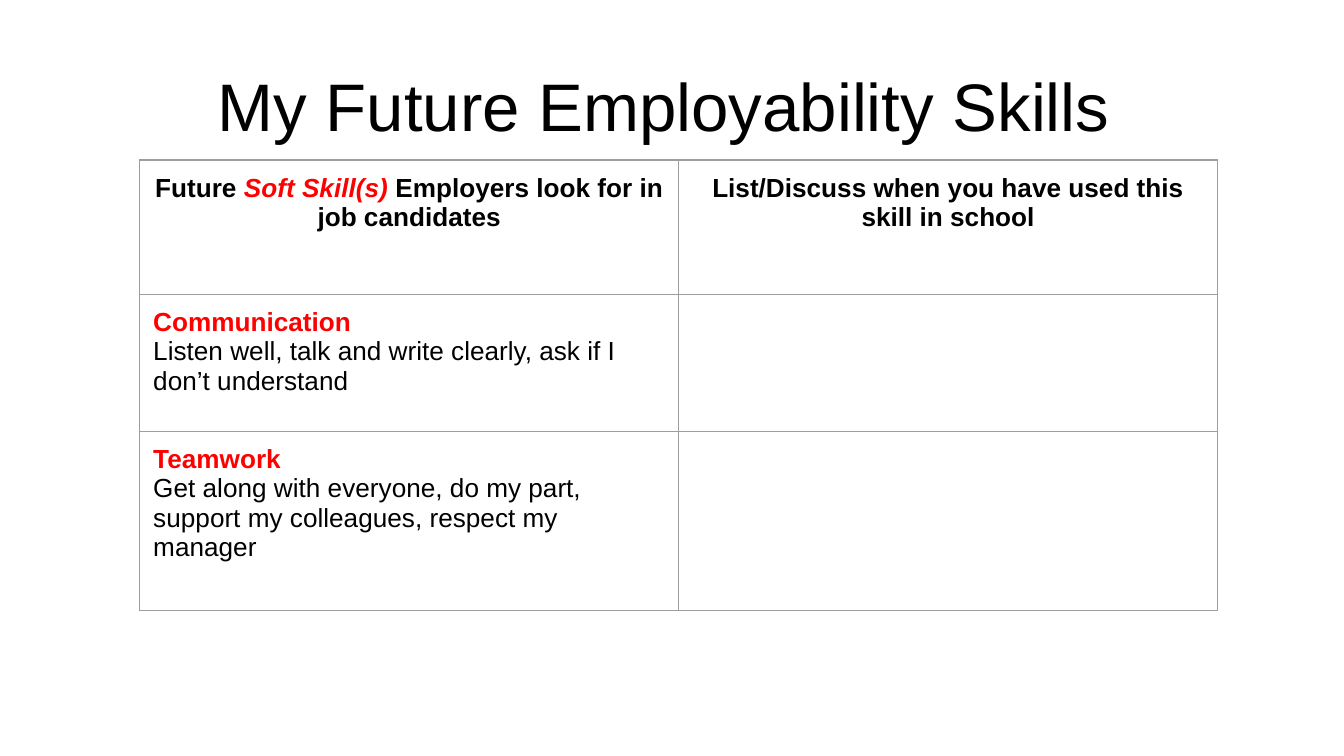
from pptx import Presentation
from pptx.dml.color import RGBColor as RGB
from pptx.enum.text import MSO_ANCHOR as Anchor, PP_ALIGN as Align
from pptx.oxml import parse_xml
from pptx.oxml.ns import nsdecls
from pptx.util import Inches, Pt

COLORS = {"text": "000000", "skill": "FF0000", "line": "9E9E9E", "page": "FFFFFF"}
STYLES = {
    "title": {"size": Pt(36), "bold": False, "italic": False},
    "head": {"size": Pt(14), "bold": True, "italic": False},
    "accent": {"size": Pt(14), "bold": True, "italic": True},
    "body": {"size": Pt(14), "bold": False, "italic": False},
}
MARGINS = {f"margin_{side}": Inches(0.1) for side in ("left", "right", "top", "bottom")}


def set_all(item, values):
    for name, value in values.items():
        setattr(item, name, value)


def add_run(para, text, style, color="text"):
    run = para.add_run()
    run.text = text
    set_all(run.font, {"name": "Arial", **STYLES[style]})
    run.font.color.rgb = RGB.from_string(COLORS[color])


deck = Presentation()
deck.slide_width = Inches(10)
deck.slide_height = Inches(10 * 9 / 16)
slide = deck.slides.add_slide(deck.slide_layouts[5])
slide.background.fill.solid()
slide.background.fill.fore_color.rgb = RGB.from_string(COLORS["page"])

title = slide.shapes.title
set_all(title, {"left": Inches(0.28), "top": Inches(0.32),
                "width": Inches(9.32), "height": Inches(0.92)})
set_all(title.text_frame, {**MARGINS, "vertical_anchor": Anchor.MIDDLE, "word_wrap": True})
para = title.text_frame.paragraphs[0]
para.alignment = Align.CENTER
add_run(para, "My Future Employability Skills", "title")

heads = [
    [("Future ", "head"), ("Soft Skill(s) ", "accent", "skill"),
     ("Employers look for in job candidates", "head")],
    [("List/Discuss when you have used this skill in school", "head")],
]
skills = [
    ("Communication", "Listen well, talk and write clearly, ask if I don’t understand"),
    ("Teamwork", "Get along with everyone, do my part, support my colleagues, respect my manager"),
]
rows = [1, 1.02, 1.33]
wide = 4.01

frame = slide.shapes.add_table(len(rows), 2, Inches(1.04), Inches(1.19),
                               Inches(2 * wide), Inches(sum(rows)))
table = frame.table
set_all(table, {"first_row": False, "horz_banding": False})
for col in table.columns:
    col.width = Inches(wide)
for row, height in zip(table.rows, rows):
    row.height = Inches(height)

for cell in table.iter_cells():
    set_all(cell, {**MARGINS, "vertical_anchor": Anchor.TOP})
    props = cell._tc.get_or_add_tcPr()
    for side in "LRTB":
        props.append(parse_xml(
            f'<a:ln{side} {nsdecls("a")} w="{Pt(0.75)}"><a:solidFill>'
            f'<a:srgbClr val="{COLORS["line"]}"/></a:solidFill></a:ln{side}>'))
    cell.fill.background()

for col, runs in enumerate(heads):
    para = table.cell(0, col).text_frame.paragraphs[0]
    para.alignment = Align.CENTER
    for run in runs:
        add_run(para, *run)

for row, (skill, note) in enumerate(skills, 1):
    text = table.cell(row, 0).text_frame
    add_run(text.paragraphs[0], skill, "head", "skill")
    add_run(text.add_paragraph(), note, "body")

deck.save("out.pptx")
